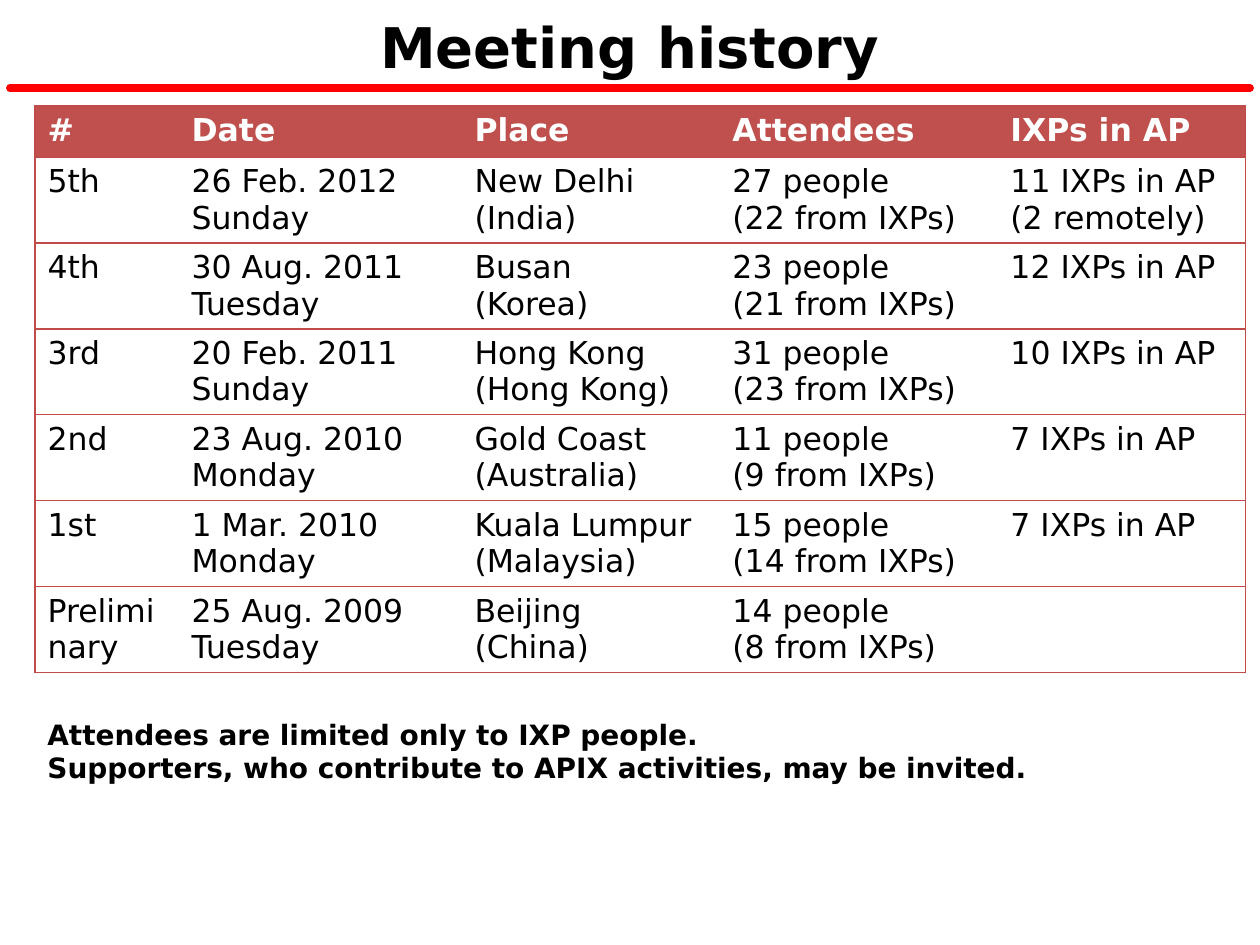
from lxml import etree
from pptx import Presentation
from pptx.dml.color import RGBColor
from pptx.enum.shapes import MSO_CONNECTOR
from pptx.enum.text import MSO_ANCHOR, PP_ALIGN
from pptx.oxml.ns import qn
from pptx.util import Emu, Pt

STRAIGHT = MSO_CONNECTOR.STRAIGHT
MIDDLE = MSO_ANCHOR.MIDDLE
LEFT, CENTER = PP_ALIGN.LEFT, PP_ALIGN.CENTER

EMU_PER_PX = 914400 / 126
FONT = "DejaVu Sans"
COLORS = {"ink": "000000", "paper": "FFFFFF", "rule": "FF0000",
          "header": "C0504D", "border": "BF4C48"}
PLAIN_TABLE = "{2D5ABB26-0587-4C30-8999-92F81FD0307C}"

COLUMN_WIDTHS = [144, 283, 258, 278, 248]
HEADER_HEIGHT, ROW_HEIGHT = 51, 86
MEETINGS = [
    ["#", "Date", "Place", "Attendees", "IXPs in AP"],
    ["5th", "26 Feb. 2012\nSunday", "New Delhi\n(India)",
     "27 people\n(22 from IXPs)", "11 IXPs in AP\n(2 remotely)"],
    ["4th", "30 Aug. 2011\nTuesday", "Busan\n(Korea)",
     "23 people\n(21 from IXPs)", "12 IXPs in AP"],
    ["3rd", "20 Feb. 2011\nSunday", "Hong Kong\n(Hong Kong)",
     "31 people\n(23 from IXPs)", "10 IXPs in AP"],
    ["2nd", "23 Aug. 2010\nMonday", "Gold Coast (Australia)",
     "11 people\n(9 from IXPs)", "7 IXPs in AP"],
    ["1st", "1 Mar. 2010\nMonday", "Kuala Lumpur\n(Malaysia)",
     "15 people\n(14 from IXPs)", "7 IXPs in AP"],
    ["Preliminary", "25 Aug. 2009\nTuesday", "Beijing\n(China)",
     "14 people\n(8 from IXPs)", ""],
]


def px(length):
    return Emu(round(length * EMU_PER_PX))


def rgb(name):
    return RGBColor.from_string(COLORS[name])


class PageBuilder:
    def __init__(self, page):
        self.page = page

    def set_text(self, frame, text, size, color="ink", bold=False, align=LEFT):
        frame.text = text
        style = {"name": FONT, "size": Pt(size), "bold": bold}
        for para in frame.paragraphs:
            para.alignment = align
            for font in [para.font] + [span.font for span in para.runs]:
                for key, value in style.items():
                    setattr(font, key, value)
                font.color.rgb = rgb(color)

    def title(self, text, left, top, width, height):
        box = self.page.shapes.title
        place = {"left": left, "top": top, "width": width, "height": height}
        for key, value in place.items():
            setattr(box, key, px(value))
        box.text_frame.vertical_anchor = MIDDLE
        self.set_text(box.text_frame, text, 32, bold=True, align=CENTER)

    def rule(self, left, right, y):
        line = self.page.shapes.add_connector(STRAIGHT, px(left), px(y), px(right), px(y))
        line.line.color.rgb = rgb("rule")
        line.line.width = Pt(4.5)
        line.line._get_or_add_ln().set("cap", "rnd")
        etree.SubElement(line._element.spPr, qn("a:effectLst"))

    def note(self, text, left, top, width, height):
        box = self.page.shapes.add_textbox(px(left), px(top), px(width), px(height))
        box.text_frame.word_wrap = False
        self.set_text(box.text_frame, text, 16, bold=True)

    def borders(self, cell, sides):
        properties = cell._tc.get_or_add_tcPr()
        for side in ("L", "R", "T", "B"):
            line = etree.SubElement(properties, qn(f"a:ln{side}"), w=str(Pt(0.75)))
            if side in sides:
                fill = etree.SubElement(line, qn("a:solidFill"))
                etree.SubElement(fill, qn("a:srgbClr"), val=COLORS["border"])
            else:
                etree.SubElement(line, qn("a:noFill"))

    def table(self, rows, left, top, widths, heights):
        table = self.page.shapes.add_table(
            len(rows), len(widths), px(left), px(top),
            px(sum(widths)), px(sum(heights))).table
        table.horz_banding = False
        table._tbl.tblPr.find(qn("a:tableStyleId")).text = PLAIN_TABLE
        for column, width in zip(table.columns, widths):
            column.width = px(width)
        for row, height in zip(table.rows, heights):
            row.height = px(height)
        for r, texts in enumerate(rows):
            for c, text in enumerate(texts):
                cell = table.cell(r, c)
                sides = "TB" + "L" * (c == 0) + "R" * (c == len(widths) - 1)
                self.borders(cell, sides)
                if r == 0:
                    cell.fill.solid()
                    cell.fill.fore_color.rgb = rgb("header")
                    self.set_text(cell.text_frame, text, 18, "paper", bold=True)
                else:
                    cell.fill.background()
                    self.set_text(cell.text_frame, text, 18)


def main():
    deck = Presentation()
    deck.slide_width, deck.slide_height = px(1260), px(945)
    builder = PageBuilder(deck.slides.add_slide(deck.slide_layouts[5]))
    builder.rule(10, 1250, 88)
    builder.title("Meeting history", 63, 6, 1134, 80)
    heights = [HEADER_HEIGHT] + [ROW_HEIGHT] * (len(MEETINGS) - 1)
    builder.table(MEETINGS, 35, 106, COLUMN_WIDTHS, heights)
    builder.note("Attendees are limited only to IXP people.\n"
                 "Supporters, who contribute to APIX activities, may be invited.",
                 35, 711, 1012, 80)
    deck.save("out.pptx")


if __name__ == "__main__":
    main()
